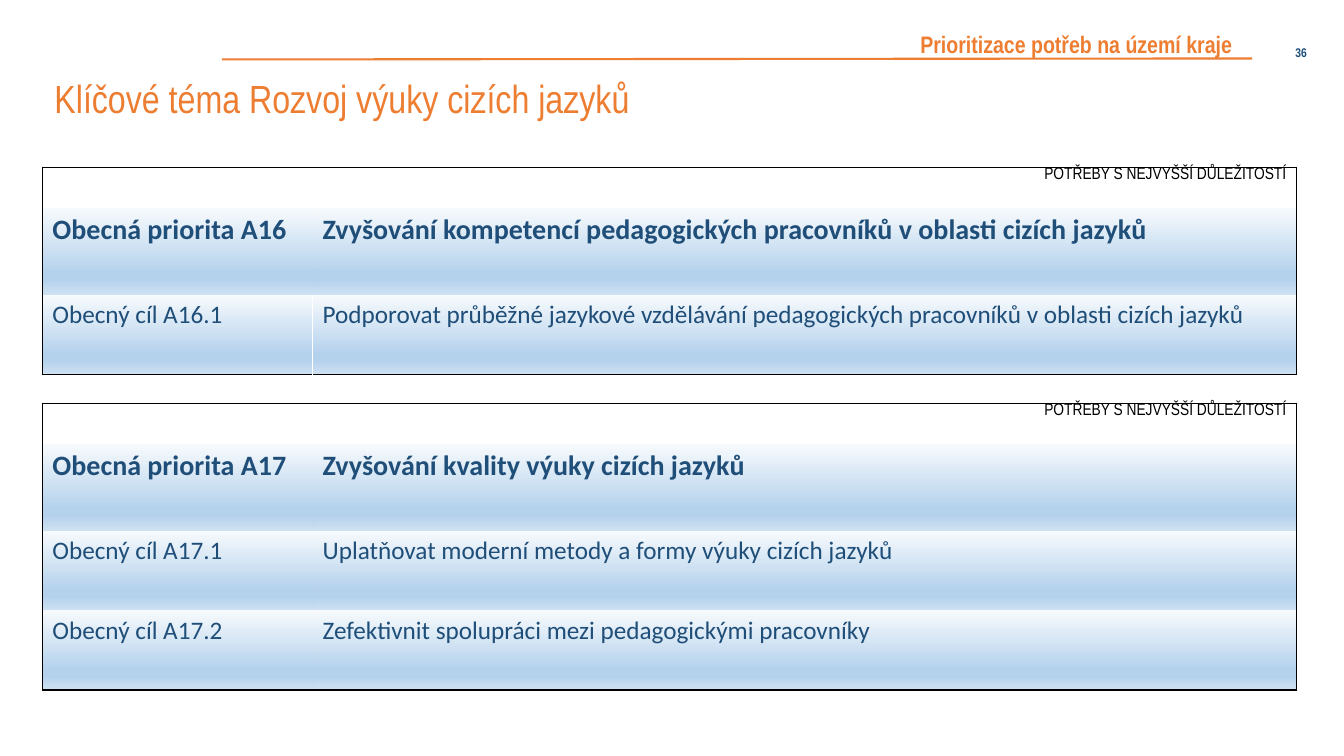
from lxml import etree
from pptx import Presentation
from pptx import util as u
from pptx.dml.color import RGBColor
from pptx.enum import shapes, text
from pptx.oxml.ns import qn

HEADING = "Klíčové téma Rozvoj výuky cizích jazyků"
SECTION = "Prioritizace potřeb na území kraje"
PAGE = "36"
IMPORTANCE = "POTŘEBY S NEJVYŠŠÍ DŮLEŽITOSTÍ"
PRIORITIES = [
    {"top": 1.66, "divider": True, "rows": [
        ("Obecná priorita A16", "Zvyšování kompetencí pedagogických pracovníků v oblasti cizích jazyků"),
        ("Obecný cíl A16.1", "Podporovat průběžné jazykové vzdělávání pedagogických pracovníků v oblasti cizích jazyků"),
    ]},
    {"top": 4.0, "divider": False, "rows": [
        ("Obecná priorita A17", "Zvyšování kvality výuky cizích jazyků"),
        ("Obecný cíl A17.1", "Uplatňovat moderní metody a formy výuky cizích jazyků"),
        ("Obecný cíl A17.2", "Zefektivnit spolupráci mezi pedagogickými pracovníky"),
    ]},
]

ORANGE, NAVY, BLACK, WHITE = "ED7D31", "1F4E79", "000000", "FFFFFF"
THEME = {
    "heading": {"name": "Arial Narrow", "size": 28, "color": ORANGE, "bold": False},
    "section": {"name": "Arial Narrow", "size": 17, "color": ORANGE, "bold": True},
    "page": {"name": "Arial Narrow", "size": 9, "color": NAVY, "bold": True},
    "importance": {"name": "Arial Narrow", "size": 12, "color": BLACK, "bold": False},
    "priority": {"name": "Calibri", "size": 20, "color": NAVY, "bold": True},
    "goal": {"name": "Calibri", "size": 18, "color": NAVY, "bold": False},
    "gradient": [(0, "F7FAFD"), (74, "B5D2EC"), (83, "B5D2EC"), (100, "CEE1F2")],
}
COLUMNS = (2.68, 9.76)
TABLE_LEFT = 0.42
IMPORTANCE_HEIGHT, PRIORITY_HEIGHT, GOAL_HEIGHT = 0.4, 0.86, 0.79
NO_GRID = "{2D5ABB26-0587-4C30-8999-92F81FD0307C}"


def write(frame, words, role, align=text.PP_ALIGN.LEFT, **paragraph_format):
    line = frame.paragraphs[0]
    line.text = words
    line.alignment = align
    for key, value in paragraph_format.items():
        setattr(line, key, value)
    style = THEME[role]
    font = line.runs[0].font
    for key, value in {"name": style["name"], "size": u.Pt(style["size"]), "bold": style["bold"]}.items():
        setattr(font, key, value)
    font.color.rgb = RGBColor.from_string(style["color"])


def place(box, left, top, width, height, anchor):
    for key, value in zip(("left", "top", "width", "height"), (left, top, width, height)):
        setattr(box, key, u.Inches(value))
    for key, value in {"word_wrap": True, "auto_size": text.MSO_AUTO_SIZE.NONE, "vertical_anchor": anchor}.items():
        setattr(box.text_frame, key, value)
    return box.text_frame


def add_color(parent, color):
    etree.SubElement(parent, qn("a:srgbClr"), val=color)


def decorate(cell, edges, shaded):
    properties = cell._tc.get_or_add_tcPr()
    for side in "LRTB":
        if side in edges:
            border = etree.SubElement(properties, qn(f"a:ln{side}"), w=str(u.Pt(1)))
            add_color(etree.SubElement(border, qn("a:solidFill")), edges[side])
    if not shaded:
        cell.fill.background()
        return
    gradient = etree.SubElement(properties, qn("a:gradFill"), rotWithShape="1")
    stops = etree.SubElement(gradient, qn("a:gsLst"))
    for share, color in THEME["gradient"]:
        add_color(etree.SubElement(stops, qn("a:gs"), pos=str(share * 1000)), color)
    etree.SubElement(gradient, qn("a:lin"), ang="5400000", scaled="0")


def add_priority(slide, priority):
    rows = [("", IMPORTANCE)] + priority["rows"]
    last = len(rows) - 1
    heights = [IMPORTANCE_HEIGHT, PRIORITY_HEIGHT] + [GOAL_HEIGHT] * (last - 1)
    roles = ["importance", "priority"] + ["goal"] * (last - 1)
    table = slide.shapes.add_table(
        len(rows), len(COLUMNS), u.Inches(TABLE_LEFT), u.Inches(priority["top"]),
        u.Inches(sum(COLUMNS)), u.Inches(sum(heights))).table
    table.first_row = table.horz_banding = False
    table._tbl.tblPr.find(qn("a:tableStyleId")).text = NO_GRID
    for column, width in zip(table.columns, COLUMNS):
        column.width = u.Inches(width)
    for r, (words, height, role) in enumerate(zip(rows, heights, roles)):
        table.rows[r].height = u.Inches(height)
        for c, entry in enumerate(words):
            cell = table.cell(r, c)
            edges = {"LR"[c]: BLACK}
            if r == 0:
                edges["T"] = BLACK
                if entry:
                    cell.margin_top = cell.margin_bottom = 0
            if r == last:
                edges["B"] = BLACK
                if priority["divider"]:
                    edges["RL"[c]] = WHITE
            if entry:
                write(cell.text_frame, entry, role, text.PP_ALIGN.LEFT if r else text.PP_ALIGN.RIGHT)
            decorate(cell, edges, r > 0)


def main():
    deck = Presentation()
    deck.slide_width, deck.slide_height = u.Inches(13.33), u.Inches(7.5)
    slide = deck.slides.add_slide(deck.slide_layouts[5])

    rule = slide.shapes.add_connector(
        shapes.MSO_CONNECTOR.STRAIGHT, u.Inches(2.2), u.Inches(0.59), u.Inches(12.42), u.Inches(0.58))
    rule.line.color.rgb = RGBColor.from_string(ORANGE)
    rule.line.width = u.Pt(1.5)
    etree.SubElement(rule._element.spPr, qn("a:effectLst"))

    heading = place(slide.shapes.title, 0.44, 0.69, 12.89, 0.62, text.MSO_ANCHOR.MIDDLE)
    write(heading, HEADING, "heading", line_spacing=0.9)
    for priority in PRIORITIES:
        add_priority(slide, priority)
    page = place(slide.shapes.add_textbox(0, 0, 0, 0), 12.27, 0.32, 0.79, 0.4, text.MSO_ANCHOR.MIDDLE)
    write(page, PAGE, "page", text.PP_ALIGN.RIGHT)
    section = place(slide.shapes.add_textbox(0, 0, 0, 0), 9.03, 0.32, 3.38, 0.31, text.MSO_ANCHOR.BOTTOM)
    write(section, SECTION, "section", line_spacing=0.9)
    deck.save("out.pptx")


if __name__ == "__main__":
    main()
